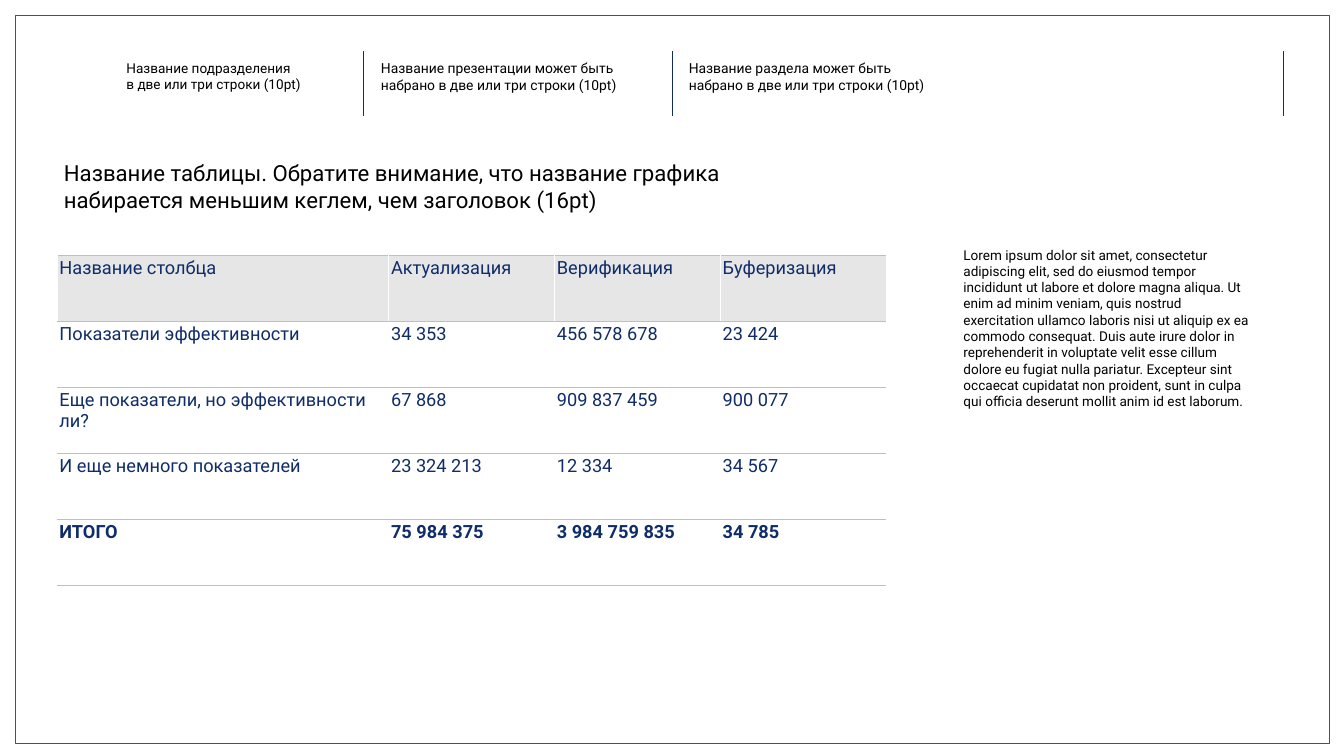
from lxml import etree
from pptx import Presentation
from pptx.dml.color import RGBColor
from pptx.enum.shapes import MSO_CONNECTOR, MSO_SHAPE
from pptx.oxml.ns import qn
from pptx.util import Pt

PX = 9144  # 100 px to the inch
STRAIGHT = MSO_CONNECTOR.STRAIGHT
RECTANGLE = MSO_SHAPE.RECTANGLE
FONT = "Roboto"
COLORS = {
    "paper": "FFFFFF",
    "ink": "000000",
    "navy": "102D69",
    "frame": "32538F",
    "header": "E7E6E6",
    "rule": "BFBFBF",
}


def color(name):
    return RGBColor.from_string(COLORS[name])


class SlideBuilder:
    def __init__(self, slide):
        self.slide = slide

    def frame(self, *box):
        frame = self.slide.shapes.add_shape(RECTANGLE, *(v * PX for v in box))
        frame.shadow.inherit = False
        frame.fill.solid()
        frame.fill.fore_color.rgb = color("paper")
        frame.line.color.rgb = color("frame")
        frame.line.width = Pt(0.25)

    def divider(self, x, top, bottom):
        divider = self.slide.shapes.add_connector(
            STRAIGHT, x * PX, top * PX, x * PX, bottom * PX)
        divider.line.color.rgb = color("navy")
        divider.line.width = Pt(0.75)
        etree.SubElement(divider._element.spPr, qn("a:effectLst"))

    def add_runs(self, paragraph, text, size, ink, bold=False):
        """Add one run per line, parted by line breaks."""
        for number, line in enumerate(text.split("\n")):
            if number:
                paragraph.add_line_break()
            run = paragraph.add_run()
            run.text = line
            run.font.name = FONT
            run.font.size = Pt(size)
            run.font.bold = bold
            run.font.color.rgb = color(ink)

    def text(self, box, paragraphs, size, leading=None):
        frame = self.slide.shapes.add_textbox(*(v * PX for v in box)).text_frame
        frame.word_wrap = True
        frame.margin_left = frame.margin_right = 10 * PX
        frame.margin_top = frame.margin_bottom = 10 * PX
        for number, content in enumerate(paragraphs):
            paragraph = frame.add_paragraph() if number else frame.paragraphs[0]
            if leading:
                paragraph.line_spacing = Pt(leading)
            self.add_runs(paragraph, content, size, "ink")

    def border(self, cell, side, name, width):
        edge = etree.SubElement(
            cell._tc.get_or_add_tcPr(), qn(f"a:ln{side}"), w=str(Pt(width)))
        fill = etree.SubElement(edge, qn("a:solidFill"))
        etree.SubElement(fill, qn("a:srgbClr"), val=COLORS[name])

    def table(self, left, top, widths, row_height, rows):
        """Draw a table whose first row is a header and last row a total."""
        table = self.slide.shapes.add_table(
            len(rows), len(widths), left * PX, top * PX,
            sum(widths) * PX, row_height * len(rows) * PX).table
        table.first_row = table.horz_banding = False
        for column, width in zip(table.columns, widths):
            column.width = width * PX
        last_row, last_column = len(rows) - 1, len(widths) - 1
        for r, values in enumerate(rows):
            table.rows[r].height = row_height * PX
            for c, value in enumerate(values):
                cell = table.cell(r, c)
                cell.margin_left = cell.margin_right = 5 * PX
                cell.margin_top = cell.margin_bottom = 5 * PX
                if c > 0:
                    self.border(cell, "L", "paper", 0.25)
                if c < last_column:
                    self.border(cell, "R", "paper", 0.25)
                self.border(cell, "T", "rule", 1)
                self.border(cell, "B", "rule", 1)
                if r == 0:
                    cell.fill.solid()
                    cell.fill.fore_color.rgb = color("header")
                else:
                    cell.fill.background()
                self.add_runs(cell.text_frame.paragraphs[0], value, 26, "navy",
                              bold=r == last_row)


HEADINGS = [
    (241, 87, 19.4, "Название подразделения\nв две или три строки (10pt)"),
    (746, 120, 19.8, "Название презентации может быть набрано в две или три строки (10pt)"),
    (1357, 120, 19.8, "Название раздела может быть набрано в две или три строки (10pt)"),
]
TITLE = [
    "Название таблицы. Обратите внимание, что название графика",
    "набирается меньшим кеглем, чем заголовок (16pt)",
]
INDICATORS = [
    ["Название столбца", "Актуализация", "Верификация", "Буферизация"],
    ["Показатели эффективности", "34 353", "456 578 678", "23 424"],
    ["Еще показатели, но эффективности ли?", "67 868", "909 837 459", "900 077"],
    ["И еще немного показателей", "23 324 213", "12 334", "34 567"],
    ["ИТОГО", "75 984 375", "3 984 759 835", "34 785"],
]
COMMENT = (
    "Lorem ipsum dolor sit amet, consectetur adipiscing elit, sed do eiusmod "
    "tempor incididunt ut labore et dolore magna aliqua. Ut enim ad minim "
    "veniam, quis nostrud exercitation ullamco laboris nisi ut aliquip ex ea "
    "commodo consequat. Duis aute irure dolor in reprehenderit in voluptate "
    "velit esse cillum dolore eu fugiat nulla pariatur. Excepteur sint "
    "occaecat cupidatat non proident, sunt in culpa qui officia deserunt "
    "mollit anim id est laborum."
)


def main():
    deck = Presentation()
    deck.slide_width, deck.slide_height = 2667 * PX, 1500 * PX
    builder = SlideBuilder(deck.slides.add_slide(deck.slide_layouts[6]))

    builder.frame(29, 30, 2609, 1444)
    for x in (721, 1334, 2547):
        builder.divider(x, 102, 230)
    for left, height, size, heading in HEADINGS:
        builder.text((left, 109, 493, height), [heading], size)

    builder.text((117, 306, 1698, 126), TITLE, 31.7)
    builder.table(113, 506, [658, 329, 329, 329], 131, INDICATORS)
    builder.text((1902, 479, 594, 353), [COMMENT], 19.4, leading=23.3)
    deck.save("out.pptx")


if __name__ == "__main__":
    main()
